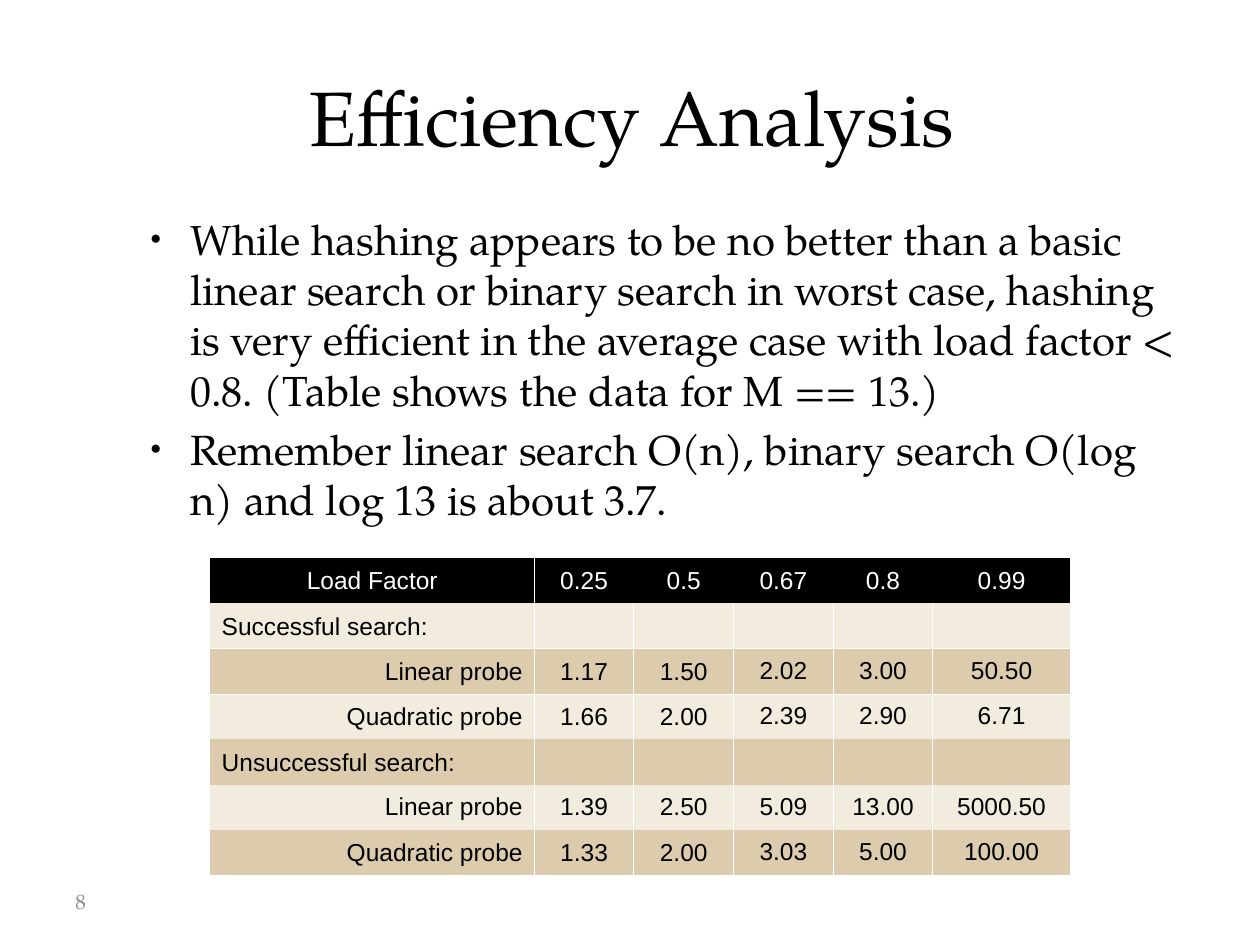
import pptx
import pptx.util
import pptx.dml.color
import pptx.enum.text
import lxml.etree
import pptx.oxml.ns

Cm, Pt = pptx.util.Cm, pptx.util.Pt
RGBColor = pptx.dml.color.RGBColor
ALIGN = pptx.enum.text.PP_ALIGN
ANCHOR = pptx.enum.text.MSO_ANCHOR
qn = pptx.oxml.ns.qn

BLACK = RGBColor(0x00, 0x00, 0x00)
WHITE = RGBColor(0xFF, 0xFF, 0xFF)
GRAY = RGBColor(0x8C, 0x8C, 0x8C)
CREAM = RGBColor(0xF2, 0xEC, 0xDE)
TAN = RGBColor(0xDC, 0xCB, 0xAC)
SERIF = "TeX Gyre Pagella"


def set_attrs(obj, values):
    for name, value in values.items():
        setattr(obj, name, value)


def add_text(p, text, font, size, color):
    r = p.add_run()
    r.text = text
    set_attrs(r.font, {"name": font, "size": Pt(size)})
    r.font.color.rgb = color


prs = pptx.Presentation()
set_attrs(prs, {"slide_width": Cm(25.4), "slide_height": Cm(19.05)})
s = prs.slides.add_slide(prs.slide_layouts[1])

# Title
sp = s.shapes.title
set_attrs(sp, {"left": Cm(1.27), "top": Cm(0.76), "width": Cm(22.94), "height": Cm(3.18)})
tf = sp.text_frame
set_attrs(tf, {"vertical_anchor": ANCHOR.MIDDLE, "margin_top": Cm(0.08),
               "auto_size": pptx.enum.text.MSO_AUTO_SIZE.NONE})
tf.paragraphs[0].alignment = ALIGN.CENTER
add_text(tf.paragraphs[0], "Efficiency Analysis", SERIF, 44, BLACK)

# Bullet list
bullets = [
    "While hashing appears to be no better than a basic linear search or binary search "
    "in worst case, hashing is very efficient in the average case with load factor < 0.8. "
    "(Table shows the data for M == 13.)",
    "Remember linear search O(n), binary search O(log n) and log 13 is about 3.7.",
]
sp = s.placeholders[1]
set_attrs(sp, {"left": Cm(2.49), "top": Cm(4.17), "width": Cm(21.69), "height": Cm(12.57)})
tf = sp.text_frame
tf.auto_size = pptx.enum.text.MSO_AUTO_SIZE.NONE
for i, text in enumerate(bullets):
    p = tf.add_paragraph() if i else tf.paragraphs[0]
    add_text(p, text, SERIF, 24, BLACK)
    pPr = p._p.get_or_add_pPr()
    pPr.set("marL", str(Cm(1.09)))
    pPr.set("indent", str(Cm(-0.81)))
    lxml.etree.SubElement(pPr, qn("a:buSzPct")).set("val", "45000")
    lxml.etree.SubElement(pPr, qn("a:buChar")).set("char", "●")

# Efficiency table
rows = [
    ["Load Factor", "0.25", "0.5", "0.67", "0.8", "0.99"],
    ["Successful search:", "", "", "", "", ""],
    ["Linear probe", "1.17", "1.50", "2.02", "3.00", "50.50"],
    ["Quadratic probe", "1.66", "2.00", "2.39", "2.90", "6.71"],
    ["Unsuccessful search:", "", "", "", "", ""],
    ["Linear probe", "1.39", "2.50", "5.09", "13.00", "5000.50"],
    ["Quadratic probe", "1.33", "2.00", "3.03", "5.00", "100.00"],
]
widths = [6.53, 2.01, 2.01, 2.01, 2.01, 2.77]
tbl = s.shapes.add_table(len(rows), len(widths), Cm(4.24), Cm(11.25),
                         Cm(sum(widths)), Cm(6.4)).table
set_attrs(tbl, {"first_row": False, "horz_banding": False})
for col, width in zip(tbl.columns, widths):
    col.width = Cm(width)

for i, row in enumerate(rows):
    for j, text in enumerate(row):
        cell = tbl.cell(i, j)
        # Thin white rules between columns and around the first group of rows
        edges = {
            "lnL": j == 1 or (i > 0 and j > 0),
            "lnR": j == 0 or (i > 0 and j < len(widths) - 1),
            "lnT": i in (2, 3),
            "lnB": i in (1, 2),
        }
        tcPr = cell._tc.get_or_add_tcPr()
        for tag, shown in edges.items():
            ln = lxml.etree.SubElement(tcPr, qn(f"a:{tag}"))
            ln.set("w", str(Pt(0.57)))
            fill = lxml.etree.SubElement(ln, qn("a:solidFill" if shown else "a:noFill"))
            if shown:
                lxml.etree.SubElement(fill, qn("a:srgbClr")).set("val", str(WHITE))
        cell.fill.solid()
        cell.fill.fore_color.rgb = BLACK if i == 0 else CREAM if i % 2 else TAN

        raised = i == 5 or (i in (2, 3, 6) and j > 2)
        set_attrs(cell, {
            "margin_left": Cm(0.23), "margin_right": Cm(0.23),
            "margin_top": Cm(0.2 if text else 0), "margin_bottom": Cm(0.15 if text else 0),
            "vertical_anchor": ANCHOR.TOP if raised else ANCHOR.MIDDLE,
        })
        if text:
            p = cell.text_frame.paragraphs[0]
            label = ALIGN.LEFT if text.endswith(":") else ALIGN.RIGHT
            set_attrs(p, {"alignment": ALIGN.CENTER if i == 0 or j > 0 else label,
                          "line_spacing": 0.93})
            add_text(p, text, "Arial", 14, BLACK if i else WHITE)

# Slide number
tf = s.shapes.add_textbox(Cm(1.27), Cm(17.65), Cm(5.92), Cm(1.02)).text_frame
set_attrs(tf, {"word_wrap": True, "vertical_anchor": ANCHOR.MIDDLE})
add_text(tf.paragraphs[0], "8", SERIF, 12, GRAY)

prs.save("out.pptx")
